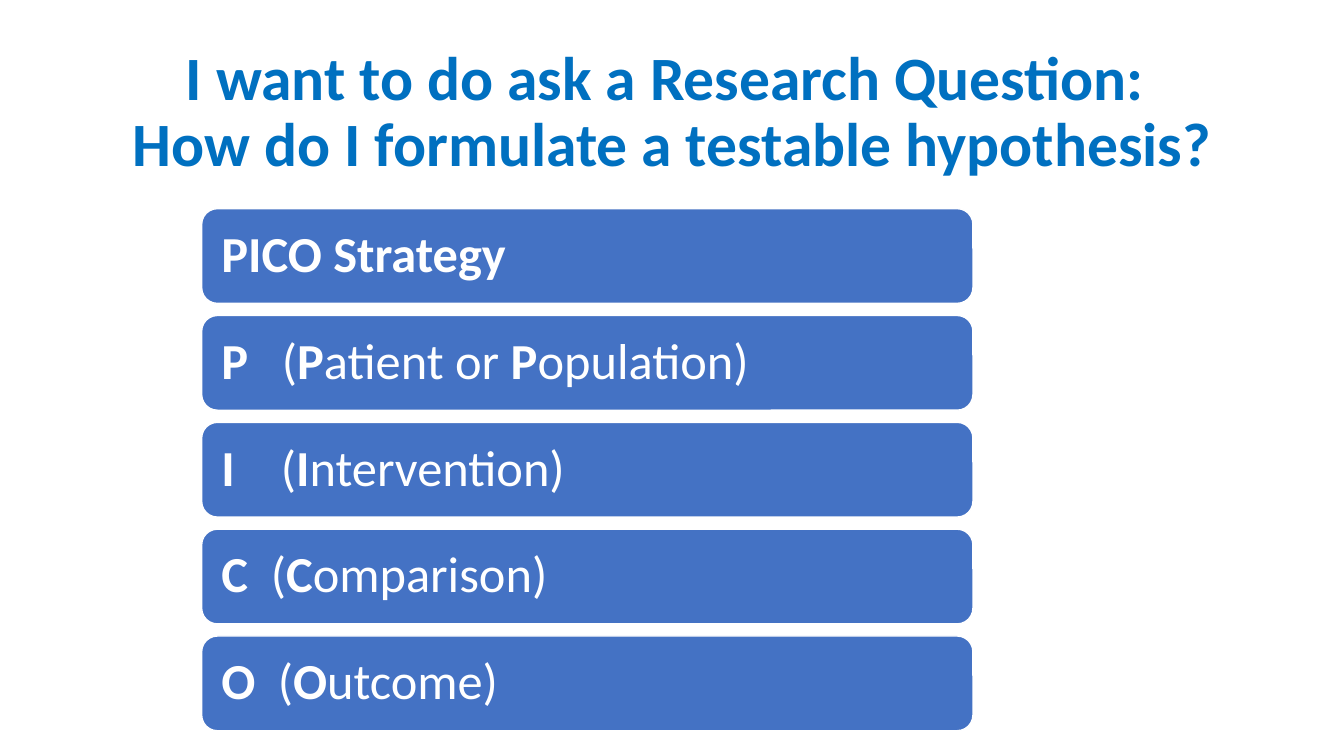
from pptx import Presentation
from pptx.dml.color import RGBColor
from pptx.enum.shapes import MSO_SHAPE as Shape
from pptx.enum.text import MSO_ANCHOR as Anchor, PP_ALIGN as Align
from pptx.oxml.ns import qn
from pptx.util import Inches, Pt
from lxml.etree import SubElement

TITLE_BLUE = RGBColor(0x00, 0x70, 0xC0)
BAR_BLUE = RGBColor(0x44, 0x72, 0xC4)
WHITE = RGBColor(0xFF, 0xFF, 0xFF)
FONT = "Calibri"


class PicoSlide:
    """Hold the text style and the slide, and add its title and bars."""

    def __init__(self, deck):
        self.slide = deck.slides.add_slide(deck.slide_layouts[5])

    def style(self, paragraph, size, color, align):
        paragraph.alignment = align
        paragraph.line_spacing = 0.9
        font = paragraph.font
        font.name, font.size, font.color.rgb = FONT, Pt(size), color
        return font

    def title(self, text):
        heading = self.slide.shapes.title
        heading.left, heading.top = Inches(0.92), Inches(0.4)
        heading.width, heading.height = Inches(11.5), Inches(1.45)
        frame = heading.text_frame
        frame.text = text
        frame.vertical_anchor = Anchor.MIDDLE
        self.style(frame.paragraphs[0], 44, TITLE_BLUE, Align.CENTER).bold = True

    def bar(self, top, parts, tab_stop):
        bar = self.slide.shapes.add_shape(
            Shape.ROUNDED_RECTANGLE, Inches(2), Inches(top), Inches(7.65), Inches(0.94))
        bar.shadow.inherit = False
        bar.fill.solid()
        bar.fill.fore_color.rgb = BAR_BLUE
        bar.line.color.rgb = WHITE
        bar.line.width = Pt(1)
        frame = bar.text_frame
        frame.word_wrap = True
        frame.vertical_anchor = Anchor.MIDDLE
        frame.margin_left = frame.margin_right = Inches(0.15)
        line = frame.paragraphs[0]
        if tab_stop:
            tabs = SubElement(line._p.get_or_add_pPr(), qn("a:tabLst"))
            SubElement(tabs, qn("a:tab"), pos=str(Inches(tab_stop)), algn="l")
        self.style(line, 36, WHITE, Align.LEFT)
        for index, part in enumerate(parts):
            run = line.add_run()
            run.text = part
            run.font.bold = index % 2 == 0


def main():
    deck = Presentation()
    deck.slide_width, deck.slide_height = Inches(13.33), Inches(7.5)
    pico = PicoSlide(deck)
    pico.title("I want to do ask a Research Question: \vHow do I formulate a testable hypothesis?")
    strategy = [
        (["PICO Strategy"], None),
        (["P", "\t(", "P", "atient or ", "P", "opulation)"], 0.6),
        (["I", "\t(", "I", "ntervention)"], 0.59),
        (["C", "\t(", "C", "omparison)"], 0.49),
        (["O", "\t(", "O", "utcome)"], 0.56),
    ]
    for row, (parts, tab_stop) in enumerate(strategy):
        pico.bar(2.07 + row * 1.06, parts, tab_stop)
    deck.save("out.pptx")


if __name__ == "__main__":
    main()
